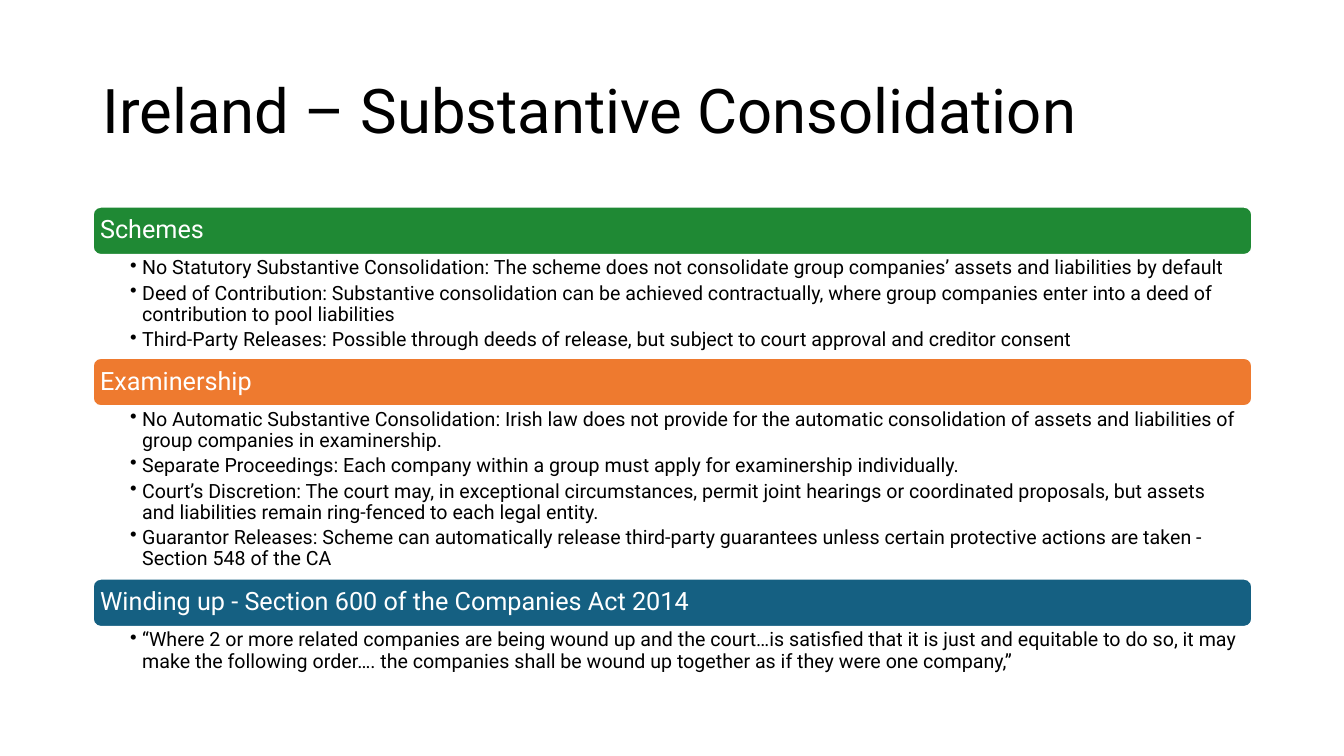
import pptx
import pptx.dml.color
import pptx.enum.shapes
import pptx.enum.text
import pptx.util
from lxml import etree

RGBColor = pptx.dml.color.RGBColor
Inches = pptx.util.Inches
Pt = pptx.util.Pt
Anchor = pptx.enum.text.MSO_ANCHOR

BLACK = RGBColor(0x00, 0x00, 0x00)
WHITE = RGBColor(0xFF, 0xFF, 0xFF)
GREEN = RGBColor(0x1F, 0x89, 0x34)
ORANGE = RGBColor(0xEE, 0x7A, 0x2F)
BLUE = RGBColor(0x15, 0x60, 0x82)

SLIDE_WIDTH, SLIDE_HEIGHT = 13.33, 7.5
MARGIN = 0.92
CONTENT_WIDTH = 11.5
TITLE_TOP, TITLE_HEIGHT = 0.4, 1.45
SECTIONS_TOP = 2.05
BAR_HEIGHT = 0.48
BULLET_INDENT = 0.12

TITLE_FONT = {"name": "Roboto", "size": Pt(44), "color": BLACK}
HEADING_FONT = {"name": "Roboto", "size": Pt(18), "color": WHITE}
BULLET_FONT = {"name": "Roboto", "size": Pt(14), "color": BLACK}

SECTIONS = [
    ("Schemes", GREEN, 1.02, [
        "No Statutory Substantive Consolidation: The scheme does not consolidate "
        "group companies’ assets and liabilities by default",
        "Deed of Contribution: Substantive consolidation can be achieved contractually, "
        "where group companies enter into a deed of contribution to pool liabilities",
        "Third-Party Releases: Possible through deeds of release, but subject to court "
        "approval and creditor consent",
    ]),
    ("Examinership", ORANGE, 1.71, [
        "No Automatic Substantive Consolidation: Irish law does not provide for the "
        "automatic consolidation of assets and liabilities of group companies in examinership.",
        "Separate Proceedings: Each company within a group must apply for examinership "
        "individually.",
        "Court’s Discretion: The court may, in exceptional circumstances, permit joint "
        "hearings or coordinated proposals, but assets and liabilities remain ring-fenced "
        "to each legal entity.",
        "Guarantor Releases: Scheme can automatically release third-party guarantees unless "
        "certain protective actions are taken - Section 548 of the CA",
    ]),
    ("Winding up - Section 600 of the Companies Act 2014", BLUE, 0.48, [
        "“Where 2 or more related companies are being wound up and the court…is satisfied "
        "that it is just and equitable to do so, it may make the following order…. the "
        "companies shall be wound up together as if they were one company,”",
    ]),
]


def to_lengths(box):
    return [Inches(value) for value in box]


def set_frame(text_frame, anchor, insets):
    left, top, right, bottom = to_lengths(insets)
    settings = {
        "word_wrap": True,
        "auto_size": pptx.enum.text.MSO_AUTO_SIZE.NONE,
        "vertical_anchor": anchor,
        "margin_left": left,
        "margin_top": top,
        "margin_right": right,
        "margin_bottom": bottom,
    }
    for name, value in settings.items():
        setattr(text_frame, name, value)


def write_paragraph(paragraph, text, font_format, space_after=0):
    paragraph.alignment = pptx.enum.text.PP_ALIGN.LEFT
    paragraph.line_spacing = 0.9
    paragraph.space_before = Pt(0)
    paragraph.space_after = Pt(space_after)
    run = paragraph.add_run()
    run.text = text
    for name, value in font_format.items():
        if name == "color":
            run.font.color.rgb = value
        else:
            setattr(run.font, name, value)


def add_bullet(paragraph):
    properties = paragraph._p.get_or_add_pPr()
    properties.set("marL", str(Inches(BULLET_INDENT)))
    properties.set("indent", str(-Inches(BULLET_INDENT)))
    bullet = etree.SubElement(properties, pptx.oxml.ns.qn("a:buChar"))
    bullet.set("char", "•")


def fill_title(slide, box):
    title = slide.shapes.title
    title.left, title.top, title.width, title.height = to_lengths(box)
    set_frame(title.text_frame, Anchor.MIDDLE, (0.1, 0.05, 0.1, 0.05))
    write_paragraph(title.text_frame.paragraphs[0], "Ireland – Substantive Consolidation", TITLE_FONT)


def add_heading_bar(slide, box, heading, color):
    bar = slide.shapes.add_shape(pptx.enum.shapes.MSO_SHAPE.ROUNDED_RECTANGLE, *to_lengths(box))
    bar.shadow.inherit = False
    bar.fill.solid()
    bar.fill.fore_color.rgb = color
    bar.line.color.rgb = WHITE
    bar.line.width = Pt(1.5)
    set_frame(bar.text_frame, Anchor.MIDDLE, (0.05, 0.07, 0.05, 0.07))
    write_paragraph(bar.text_frame.paragraphs[0], heading, HEADING_FONT)


def add_bullet_list(slide, box, bullets):
    text_frame = slide.shapes.add_textbox(*to_lengths(box)).text_frame
    set_frame(text_frame, Anchor.TOP, (0.37, 0.03, 0.14, 0.03))
    for index, bullet in enumerate(bullets):
        paragraph = text_frame.add_paragraph() if index else text_frame.paragraphs[0]
        paragraph.level = 1
        write_paragraph(paragraph, bullet, BULLET_FONT, space_after=3)
        add_bullet(paragraph)


def add_section(slide, box, heading, color, bullets):
    left, top, width, height = box
    add_heading_bar(slide, (left, top, width, BAR_HEIGHT), heading, color)
    add_bullet_list(slide, (left, top + BAR_HEIGHT, width, height - BAR_HEIGHT), bullets)


def main():
    presentation = pptx.Presentation()
    presentation.slide_width = Inches(SLIDE_WIDTH)
    presentation.slide_height = Inches(SLIDE_HEIGHT)
    slide = presentation.slides.add_slide(presentation.slide_layouts.get_by_name("Title Only"))
    fill_title(slide, (MARGIN, TITLE_TOP, CONTENT_WIDTH, TITLE_HEIGHT))
    top = SECTIONS_TOP
    for heading, color, list_height, bullets in SECTIONS:
        height = BAR_HEIGHT + list_height
        add_section(slide, (MARGIN, top, CONTENT_WIDTH, height), heading, color, bullets)
        top += height
    presentation.save("out.pptx")


if __name__ == "__main__":
    main()
